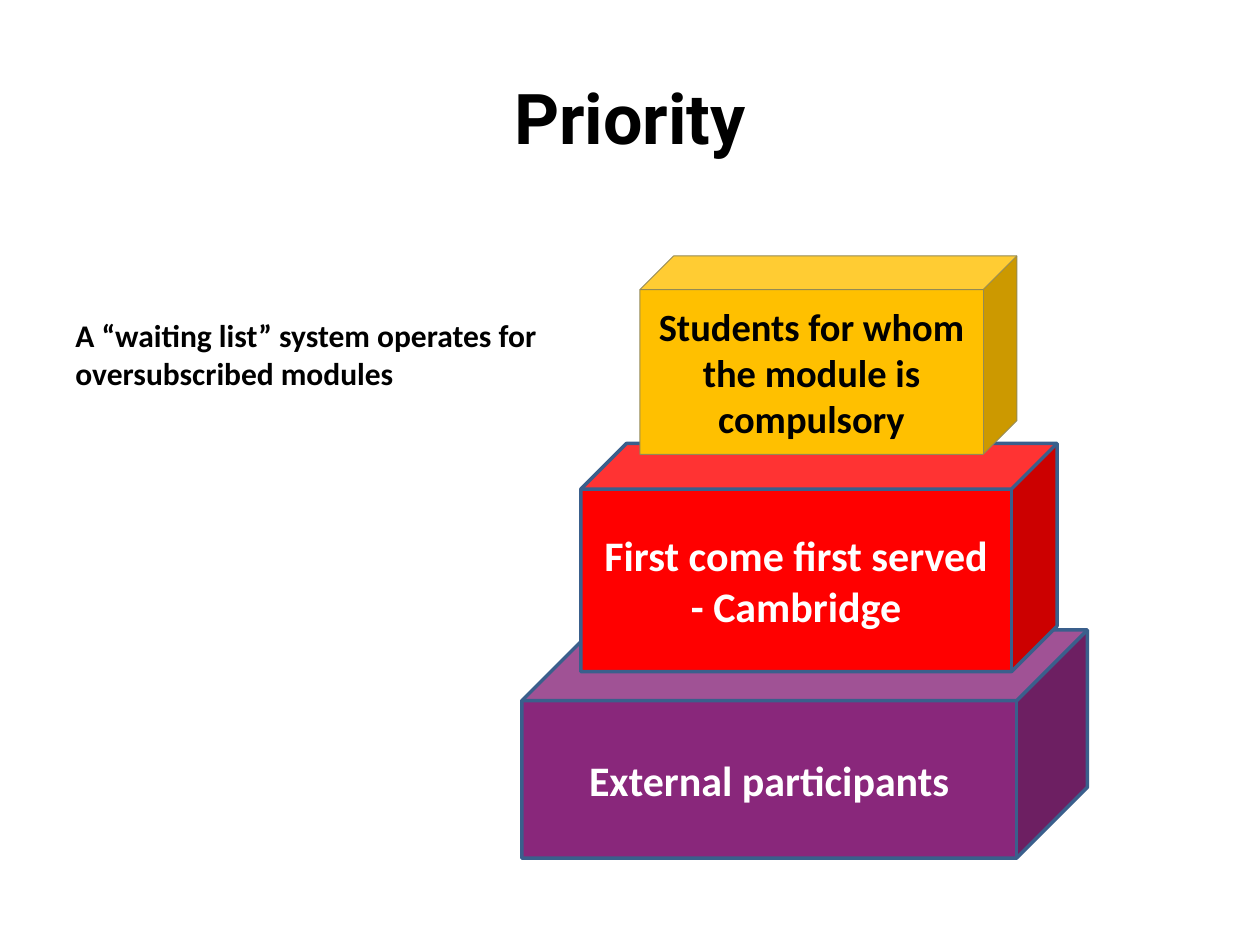
import pptx
import pptx.dml.color
import pptx.enum.shapes
import pptx.enum.text
import pptx.util

Cm = pptx.util.Cm
Pt = pptx.util.Pt
PP_ALIGN = pptx.enum.text.PP_ALIGN
MSO_ANCHOR = pptx.enum.text.MSO_ANCHOR


def colour(value):
    """Turn a hex string into a colour."""
    return pptx.dml.color.RGBColor.from_string(value)


def write(frame, text, size, font, ink, align, anchor):
    """Fill a text frame with one bold paragraph."""
    frame.text = text
    frame.word_wrap = True
    frame.vertical_anchor = anchor
    para = frame.paragraphs[0]
    para.alignment = align
    for span in para.runs:
        span.font.name = font
        span.font.size = Pt(size)
        span.font.bold = True
        span.font.color.rgb = colour(ink)


def add_title(page, left, top, width, height):
    """Place the centred heading."""
    box = page.shapes.add_textbox(Cm(left), Cm(top), Cm(width), Cm(height))
    write(box.text_frame, "Priority", 40, "Roboto", "000000",
          PP_ALIGN.CENTER, MSO_ANCHOR.MIDDLE)


def add_note(page, left, top, width, height):
    """Place the remark on the waiting list."""
    box = page.shapes.add_textbox(Cm(left), Cm(top), Cm(width), Cm(height))
    write(box.text_frame,
          "A “waiting list” system operates for \voversubscribed modules",
          18, "Calibri", "000000", PP_ALIGN.LEFT, MSO_ANCHOR.TOP)


def add_block(page, left, top, width, height, depth, fill, edge, weight, text, size, ink):
    """Place one labelled cube and return it."""
    block = page.shapes.add_shape(pptx.enum.shapes.MSO_SHAPE.CUBE,
                                  Cm(left), Cm(top), Cm(width), Cm(height))
    block.adjustments[0] = depth
    block.shadow.inherit = False
    block.fill.solid()
    block.fill.fore_color.rgb = colour(fill)
    block.line.color.rgb = colour(edge)
    block.line.width = Pt(weight)
    write(block.text_frame, text, size, "Calibri", ink,
          PP_ALIGN.CENTER, MSO_ANCHOR.MIDDLE)
    return block


def add_stack(page, left, top):
    """Pile the three priority blocks from the bottom up."""
    step = 1.19
    add_block(page, left, top + 7.54, 11.4, 4.6, 0.31, "89277B", "3A5F8C", 2,
              "External participants", 24, "FFFFFF")
    add_block(page, left + step, top + 3.78, 9.6, 4.6, 0.2, "FF0000", "3A5F8C", 2,
              "First come first served - Cambridge", 24, "FFFFFF")
    highest = add_block(page, left + 2 * step, top, 7.6, 4, 0.17, "FFC000", "948A54", 0.5,
                        "Students for whom the module is compulsory", 22, "000000")
    highest.text_frame.margin_left = highest.text_frame.margin_right = Cm(0.1)


def main():
    """Build the deck."""
    deck = pptx.Presentation()
    deck.slide_width = Cm(25.4)
    deck.slide_height = Cm(19.05)
    page = deck.slides.add_slide(deck.slide_layouts[6])
    add_title(page, 1.27, 0.76, 22.86, 3.18)
    add_note(page, 1.27, 6.25, 11, 1.9)
    add_stack(page, 10.52, 5.16)
    deck.save("out.pptx")


if __name__ == "__main__":
    main()
